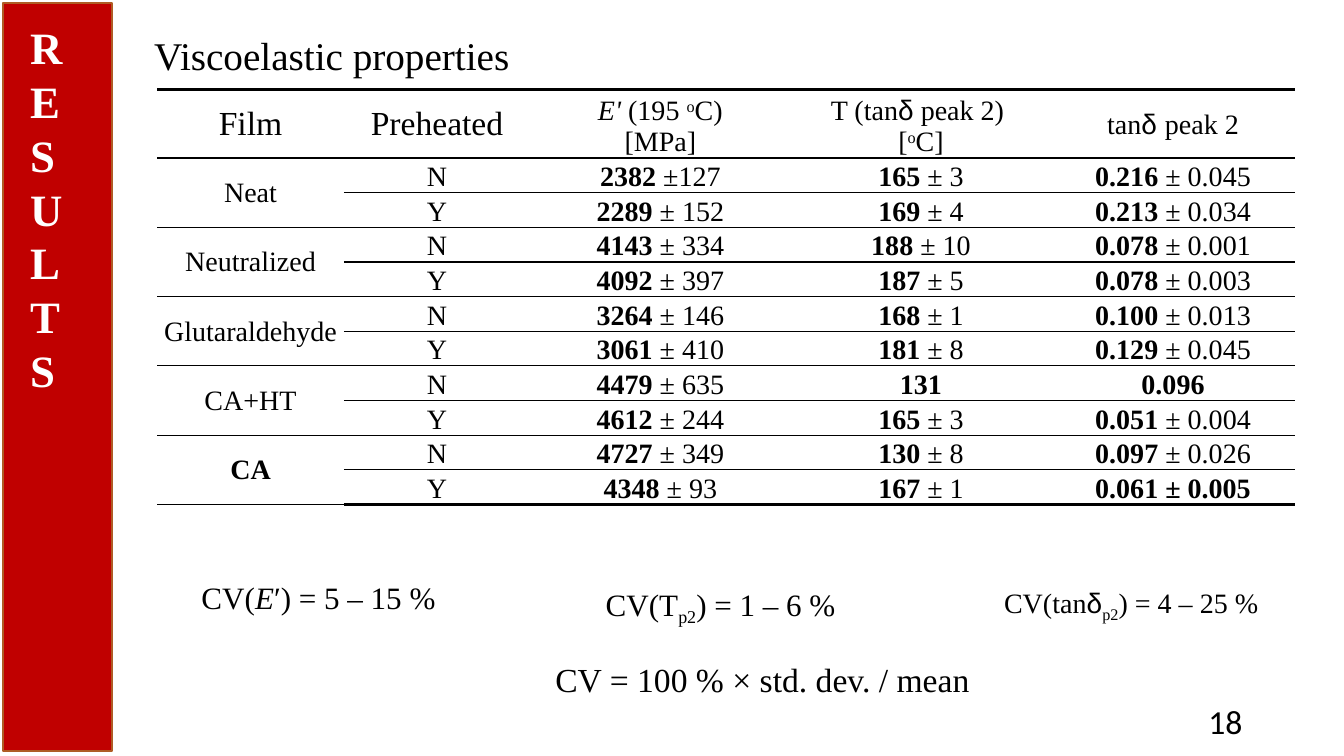
from lxml import etree
from pptx import Presentation, util as u
from pptx.dml.color import RGBColor
from pptx.enum import shapes, text
from pptx.oxml import ns

BLACK = RGBColor(0x00, 0x00, 0x00)
WHITE = RGBColor(0xFF, 0xFF, 0xFF)
RED = RGBColor(0xC0, 0x00, 0x00)
BROWN = RGBColor(0xAF, 0x5C, 0x24)
SERIF = "Times New Roman"
ITALIC = {"italic": True}
BOLD = {"bold": True}
GREEK = {"name": "Arial"}
SUPERSCRIPT = {"baseline": "30000"}
SUBSCRIPT = {"baseline": "-25000"}
NO_STYLE = "{2D5ABB26-0587-4C30-8999-92F81FD0307C}"
THIN, THICK = 1, 2.25

COLUMN_WIDTHS = [1.85, 1.85, 2.58, 2.59, 2.41]
HEADER_HEIGHT = 0.67
HEADERS = [
    (24, [("Film", {})]),
    (24, [("Preheated", {})]),
    (20, [("E' ", ITALIC), ("(195 ", {}), ("o", SUPERSCRIPT), ("C)", {}),
          ("\n", {}), ("[MPa]", {})]),
    (20, [("T (tan", {}), ("δ", GREEK), (" peak 2) ", {}), ("\n", {}),
          ("[", {}), ("o", SUPERSCRIPT), ("C]", {})]),
    (20, [("tan", {}), ("δ ", GREEK), ("peak 2", {})]),
]
FILMS = {
    "Neat": [("2382 ±127", "165 ± 3", "0.216 ± 0.045"),
             ("2289 ± 152", "169 ± 4", "0.213 ± 0.034")],
    "Neutralized": [("4143 ± 334", "188 ± 10", "0.078 ± 0.001"),
                    ("4092 ± 397", "187 ± 5", "0.078 ± 0.003")],
    "Glutaraldehyde": [("3264 ± 146", "168 ± 1", "0.100 ± 0.013"),
                       ("3061 ± 410", "181 ± 8", "0.129 ± 0.045")],
    "CA+HT": [("4479 ± 635", "131", "0.096"),
              ("4612 ± 244", "165 ± 3", "0.051 ± 0.004")],
    "CA": [("4727 ± 349", "130 ± 8", "0.097 ± 0.026"),
           ("4348 ± 93", "167 ± 1", "0.061 ± 0.005")],
}
BOLD_ENTRIES = {"CA", "0.061 ± 0.005"}

STATEMENTS = [
    ((1.43, 0.31, 11.52, 0.67), 28, [("Viscoelastic properties", {})]),
    ((5.41, 6.53, 4.44, 0.5), 24, [("CV = 100 % × std. dev. / mean", {})]),
    ((1.9, 5.73, 2.61, 0.61), 22.2,
     [("CV(", {}), ("E", ITALIC), ("′) = 5 – 15 %", {})]),
    ((5.91, 5.76, 2.54, 0.5), 22.2,
     [("CV(T", {}), ("p2", SUBSCRIPT), (") = 1 – 6 %", {})]),
    ((9.86, 5.76, 4, 0.63), 20,
     [("CV(tan", {}), ("δ", GREEK), ("p2", SUBSCRIPT), (") = 4 – 25 %", {})]),
]


def set_attributes(target, values):
    """Set each named attribute of the target."""
    for name, value in values.items():
        setattr(target, name, value)


def write_runs(paragraph, pieces, size, color=BLACK, font=SERIF):
    """Write pieces of text with their formats into a paragraph."""
    for wording, changes in pieces:
        if wording == "\n":
            paragraph.add_line_break()
            continue
        run = paragraph.add_run()
        run.text = wording
        values = {"name": font, "size": u.Pt(size), **changes}
        baseline = values.pop("baseline", None)
        set_attributes(run.font, values)
        run.font.color.rgb = color
        if baseline:
            run.font._element.set("baseline", baseline)


def add_text(slide, box, pieces, size, frame={}, layout={}, **style):
    """Add a one-paragraph text box and return its shape."""
    shape = slide.shapes.add_textbox(*map(u.Inches, box))
    set_attributes(shape.text_frame, {"word_wrap": True, **frame})
    paragraph = shape.text_frame.paragraphs[0]
    set_attributes(paragraph, layout)
    write_runs(paragraph, pieces, size, **style)
    return shape


def add_sidebar(slide, box):
    """Draw the red band with its stacked section name."""
    left, top, width, height = box
    band = slide.shapes.add_shape(shapes.MSO_SHAPE.RECTANGLE, *map(u.Inches, box))
    band.shadow.inherit = False
    band.fill.solid()
    band.fill.fore_color.rgb = RED
    band.line.color.rgb = BROWN
    band.line.width = u.Pt(1)
    label = add_text(
        slide, (left + 0.17, top + 0.12, 0.78, 3.82), [("RESULTS", BOLD)], 32,
        {"word_wrap": False, "auto_size": text.MSO_AUTO_SIZE.SHAPE_TO_FIT_TEXT},
        color=WHITE)
    label.text_frame._txBody.bodyPr.set("vert", "wordArtVert")
    properties = label.text_frame.paragraphs[0].runs[0].font._element
    properties.set("spc", "-300")
    effects = etree.Element(ns.qn("a:effectLst"))
    shadow = etree.SubElement(effects, ns.qn("a:outerShdw"), blurRad="50800",
                              dist="38100", dir="2700000")
    shade = etree.SubElement(shadow, ns.qn("a:srgbClr"), val=str(BLACK))
    etree.SubElement(shade, ns.qn("a:alpha"), val="40000")
    properties.find(ns.qn("a:solidFill")).addnext(effects)


def set_borders(cell, top, bottom):
    """Rule a cell above and below, leaving its sides open."""
    properties = cell._tc.get_or_add_tcPr()
    for index, (side, width) in enumerate(
            {"lnL": 0, "lnR": 0, "lnT": top, "lnB": bottom}.items()):
        line = etree.Element(ns.qn(f"a:{side}"), w=str(u.Pt(width)))
        if width:
            fill = etree.SubElement(line, ns.qn("a:solidFill"))
            etree.SubElement(fill, ns.qn("a:srgbClr"), val=str(BLACK))
        else:
            etree.SubElement(line, ns.qn("a:noFill"))
        properties.insert(index, line)


def fill_cell(cell, pieces, size, anchor):
    """Write centred text into a white cell."""
    margin = u.Inches(0.01)
    set_attributes(cell, {"margin_left": margin, "margin_right": margin,
                          "margin_top": margin, "margin_bottom": 0,
                          "vertical_anchor": anchor})
    cell.fill.solid()
    cell.fill.fore_color.rgb = WHITE
    paragraph = cell.text_frame.paragraphs[0]
    paragraph.alignment = text.PP_ALIGN.CENTER
    write_runs(paragraph, pieces, size)


def value_pieces(entry):
    """Split an entry into its bold mean and plain deviation."""
    if entry in BOLD_ENTRIES:
        return [(entry, BOLD)]
    mean, space, deviation = entry.partition(" ")
    return [(mean, BOLD)] + ([(space + deviation, {})] if deviation else [])


def add_results_table(slide, box):
    """Add the film table with two rows for each film."""
    height = box[3]
    row_count = 1 + 2 * len(FILMS)
    frame = slide.shapes.add_table(row_count, len(COLUMN_WIDTHS), *map(u.Inches, box))
    table = frame.table
    set_attributes(table, {"first_row": False, "horz_banding": False})
    table._tbl.tblPr.find(ns.qn("a:tableStyleId")).text = NO_STYLE
    for column, width in zip(table.columns, COLUMN_WIDTHS):
        column.width = u.Inches(width)
    for index, row in enumerate(table.rows):
        row.height = u.Inches((height - HEADER_HEIGHT) / (row_count - 1) if index else HEADER_HEIGHT)
        for cell in row.cells:
            set_borders(cell, THIN if index else THICK,
                        THICK if index == row_count - 1 else THIN)
    middle, bottom = text.MSO_ANCHOR.MIDDLE, text.MSO_ANCHOR.BOTTOM
    for index, (size, pieces) in enumerate(HEADERS):
        fill_cell(table.cell(0, index), pieces, size, bottom if index in (2, 3) else middle)
    for group, (film, records) in enumerate(FILMS.items()):
        first = 1 + 2 * group
        table.cell(first, 0).merge(table.cell(first + 1, 0))
        fill_cell(table.cell(first, 0), [(film, {"bold": film in BOLD_ENTRIES})], 20, middle)
        for offset, (preheated, record) in enumerate(zip("NY", records)):
            fill_cell(table.cell(first + offset, 1), [(preheated, {})], 20, bottom)
            for column, entry in enumerate(record, 2):
                fill_cell(table.cell(first + offset, column), value_pieces(entry), 20, bottom)


def add_statements(slide):
    """Add the heading and the variation formulas."""
    for box, size, pieces in STATEMENTS:
        add_text(slide, box, pieces, size,
                 layout={"line_spacing": 0.9, "space_before": u.Pt(10)})


def add_page_number(slide, box):
    """Add the right-aligned page number."""
    add_text(slide, box, [("18", {})], 24,
             {"vertical_anchor": text.MSO_ANCHOR.MIDDLE},
             {"alignment": text.PP_ALIGN.RIGHT}, font="Calibri")


def main():
    """Build the slide and save it."""
    presentation = Presentation()
    set_attributes(presentation, {"slide_width": u.Inches(13.33),
                                  "slide_height": u.Inches(7.5)})
    slide = presentation.slides.add_slide(presentation.slide_layouts[6])
    add_sidebar(slide, (0.03, 0.03, 1.08, 7.42))
    add_results_table(slide, (1.56, 0.89, 11.29, 4.11))
    add_statements(slide)
    add_page_number(slide, (9.42, 6.95, 3, 0.4))
    presentation.save("out.pptx")


if __name__ == "__main__":
    main()
